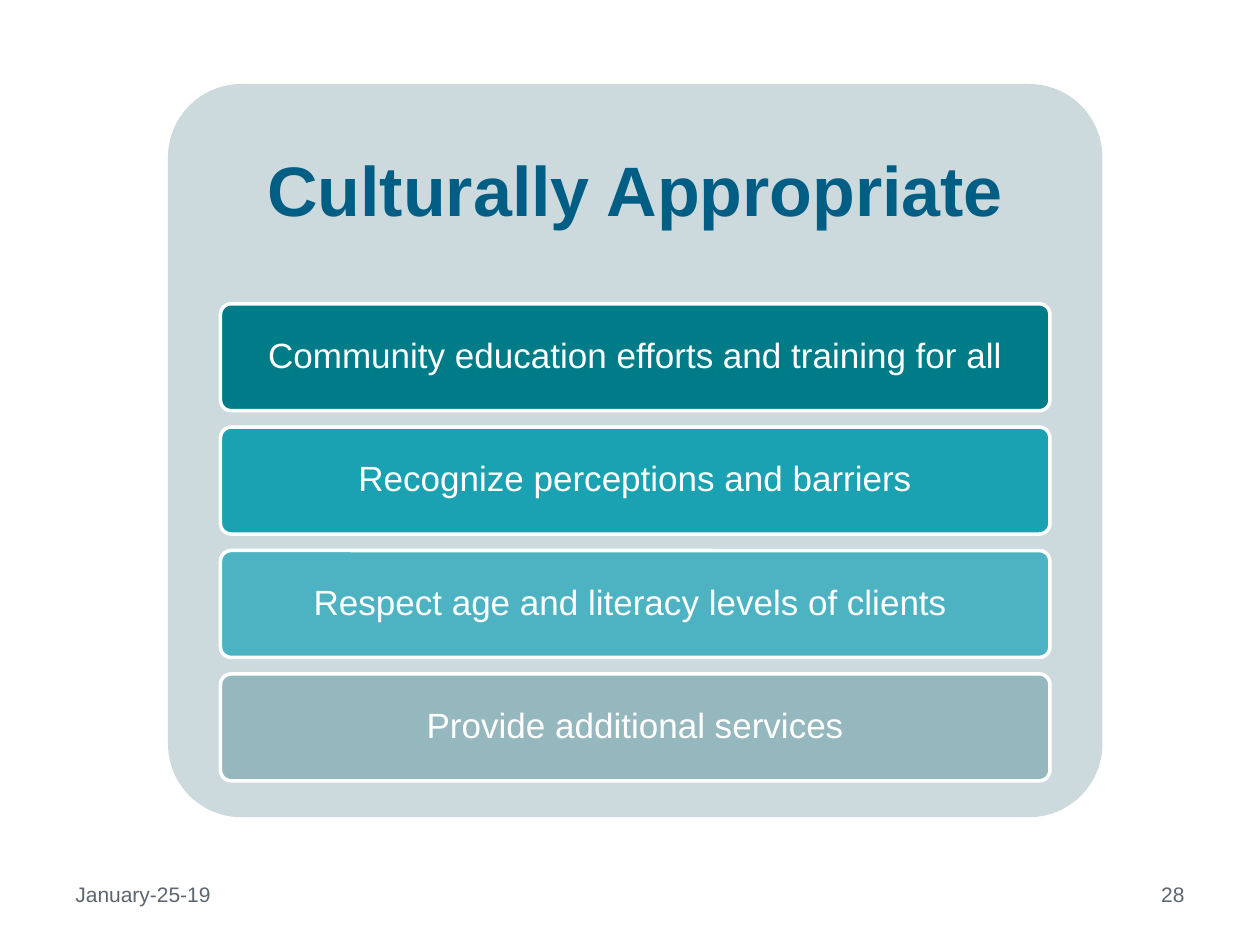
from dataclasses import dataclass

from pptx import Presentation
from pptx.dml.color import RGBColor
from pptx.enum.shapes import MSO_SHAPE
from pptx.enum.text import MSO_ANCHOR, MSO_AUTO_SIZE, PP_ALIGN
from pptx.util import Pt


@dataclass(frozen=True)
class Theme:
    font: str = "Arial"
    title_size: int = 40
    body_size: int = 20
    footer_size: int = 12
    panel: str = "CCDADD"
    title: str = "005E85"
    light: str = "FFFFFF"
    footer: str = "5C6670"
    bars: tuple = ("007C88", "1AA1B2", "4DB3C2", "95B8BE")


@dataclass(frozen=True)
class Box:
    left: float
    top: float
    width: float
    height: float

    def lengths(self):
        return Pt(self.left), Pt(self.top), Pt(self.width), Pt(self.height)


THEME = Theme()
TITLE = "Culturally Appropriate"
PRACTICES = (
    "Community education efforts and training for all",
    "Recognize perceptions and barriers",
    "Respect age and literacy levels of clients ",
    "Provide additional services",
)


def write_text(shape, text, size, color, align, insets, bold=False, line_spacing=1.0):
    frame = shape.text_frame
    frame.text = text
    frame.word_wrap = True
    frame.auto_size = MSO_AUTO_SIZE.NONE
    frame.vertical_anchor = MSO_ANCHOR.MIDDLE
    frame.margin_left = frame.margin_right = Pt(insets[0])
    frame.margin_top = frame.margin_bottom = Pt(insets[1])
    para = frame.paragraphs[0]
    para.alignment = align
    para.line_spacing = line_spacing
    para.font.name = THEME.font
    para.font.size = Pt(size)
    para.font.bold = bold
    para.font.color.rgb = RGBColor.from_string(color)


def add_rounded(page, box, fill, outline=None):
    shape = page.shapes.add_shape(MSO_SHAPE.ROUNDED_RECTANGLE, *box.lengths())
    shape.adjustments[0] = 0.1
    shape.shadow.inherit = False
    shape.fill.solid()
    shape.fill.fore_color.rgb = RGBColor.from_string(fill)
    if outline:
        shape.line.color.rgb = RGBColor.from_string(outline)
        shape.line.width = Pt(2)
    else:
        shape.line.fill.background()
    return shape


def add_panel(page, box, title_height):
    panel = add_rounded(page, box, THEME.panel)
    title = page.shapes.title
    title.left, title.top, title.width, title.height = Box(
        box.left, box.top, box.width, title_height).lengths()
    write_text(title, TITLE, THEME.title_size, THEME.title, PP_ALIGN.CENTER,
               (12, 12), bold=True, line_spacing=0.9)
    # Bring the title in front of the panel
    panel._element.addnext(title._element)


def add_bars(page, box, gap):
    count = len(PRACTICES)
    height = (box.height - gap * (count - 1)) / count
    for index, (text, fill) in enumerate(zip(PRACTICES, THEME.bars)):
        top = box.top + index * (height + gap)
        bar = add_rounded(page, Box(box.left, top, box.width, height), fill, THEME.light)
        write_text(bar, text, THEME.body_size, THEME.light, PP_ALIGN.CENTER,
                   (4, 3), line_spacing=0.9)


def add_footer(page, box, part_width):
    right = box.left + box.width - part_width
    for text, left, align in (("January-25-19", box.left, PP_ALIGN.LEFT),
                              ("28", right, PP_ALIGN.RIGHT)):
        part = page.shapes.add_textbox(*Box(left, box.top, part_width, box.height).lengths())
        write_text(part, text, THEME.footer_size, THEME.footer, align, (7.2, 3.6))


def main():
    deck = Presentation()
    deck.slide_width, deck.slide_height = Pt(720), Pt(540)
    page = deck.slides.add_slide(deck.slide_layouts[5])  # title only

    # Panel with its heading, then the stacked practices
    add_panel(page, Box(96, 48, 534, 419), title_height=126)
    add_bars(page, Box(126, 173.6, 474, 272.6), gap=9.4)

    # Date and page number
    add_footer(page, Box(36, 496.3, 648, 28.8), part_width=168)

    deck.save("out.pptx")


if __name__ == "__main__":
    main()
